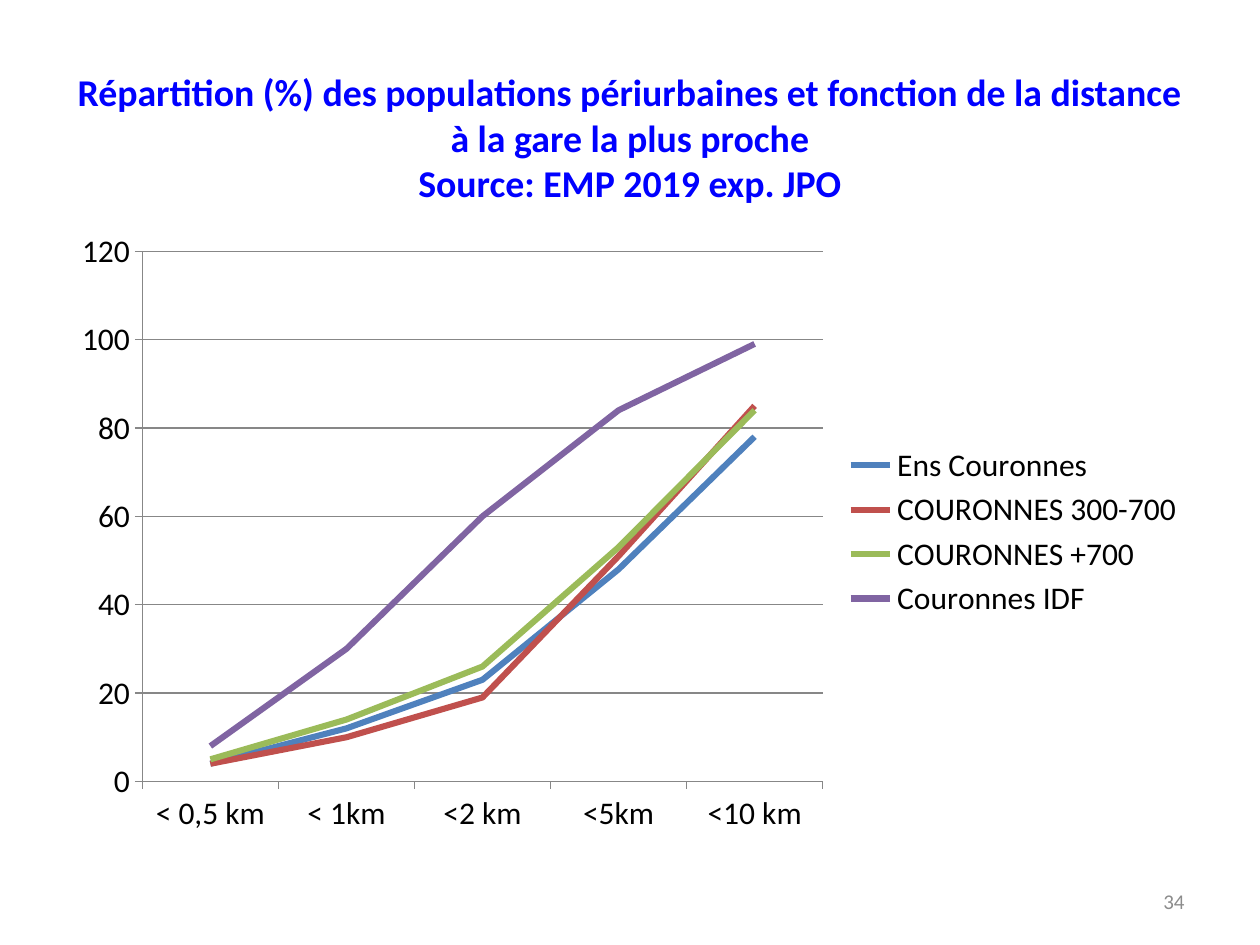
from lxml import etree
from pptx import Presentation
from pptx import util as u
from pptx.chart.data import CategoryChartData
from pptx.dml.color import RGBColor
from pptx.enum import chart as charts, text
from pptx.oxml.ns import qn

FONT = "Calibri"
GRID_GRAY = "878787"
TITLE = (
    "Répartition (%) des populations périurbaines et fonction de la distance "
    "à la gare la plus proche\vSource: EMP 2019 exp. JPO"
)
DISTANCES = ["< 0,5 km", "< 1km", "<2 km", "<5km", "<10 km"]
POPULATIONS = [
    ("Ens Couronnes", [4, 12, 23, 48, 78], "4F81BD"),
    ("COURONNES 300-700", [4, 10, 19, 51, 85], "C0504D"),
    ("COURONNES +700", [5, 14, 26, 53, 84], "9BBB59"),
    ("Couronnes IDF", [8, 30, 60, 84, 99], "8064A2"),
]


def px(length):
    return u.Emu(round(length * 914400 / 126))


def color(value):
    return RGBColor.from_string(value)


def style_font(font, size, value, bold=False):
    font.name = FONT
    font.size = u.Pt(size)
    font.bold = bold
    font.color.rgb = color(value)


def style_line(line, value, width):
    line.color.rgb = color(value)
    line.width = u.Pt(width)


def fill_text(shape, content, alignment, size, value, bold=False):
    frame = shape.text_frame
    frame.text = content
    frame.word_wrap = True
    frame.auto_size = text.MSO_AUTO_SIZE.NONE
    frame.vertical_anchor = text.MSO_ANCHOR.MIDDLE
    paragraph = frame.paragraphs[0]
    paragraph.alignment = alignment
    for run in paragraph.runs:
        style_font(run.font, size, value, bold)


def place_title(slide, left, top, width, height):
    title = slide.shapes.title
    title.left, title.top = px(left), px(top)
    title.width, title.height = px(width), px(height)
    fill_text(title, TITLE, text.PP_ALIGN.CENTER, 21.6, "0000FF", True)


def set_plot_layout(chart, **fractions):
    plot_area = chart._chartSpace.chart.plotArea
    for old in plot_area.findall(qn("c:layout")):
        plot_area.remove(old)
    layout = etree.Element(qn("c:layout"))
    manual = etree.SubElement(layout, qn("c:manualLayout"))
    settings = {"layoutTarget": "inner", "xMode": "edge", "yMode": "edge", **fractions}
    for name, value in settings.items():
        etree.SubElement(manual, qn(f"c:{name}")).set("val", str(value))
    plot_area.insert(0, layout)


def place_chart(slide, left, top, width, height):
    data = CategoryChartData()
    data.categories = DISTANCES
    for name, values, _ in POPULATIONS:
        data.add_series(name, values)
    chart = slide.shapes.add_chart(
        charts.XL_CHART_TYPE.LINE, px(left), px(top), px(width), px(height), data
    ).chart
    chart.has_title = False
    style_font(chart.font, 18, "000000")
    chart.has_legend = True
    chart.legend.position = charts.XL_LEGEND_POSITION.RIGHT
    chart.legend.include_in_layout = False
    set_plot_layout(chart, x=0.07, y=0.05, w=0.6, h=0.85)

    plot = chart.plots[0]
    plot.vary_by_categories = False
    for series, (_, _, line_color) in zip(plot.series, POPULATIONS):
        series.smooth = False
        series.marker.style = charts.XL_MARKER_STYLE.NONE
        style_line(series.format.line, line_color, 3.5)

    for axis in (chart.category_axis, chart.value_axis):
        axis.major_tick_mark = charts.XL_TICK_MARK.OUTSIDE
        axis.minor_tick_mark = charts.XL_TICK_MARK.NONE
        style_line(axis.format.line, GRID_GRAY, 0.75)
    chart.category_axis.has_major_gridlines = False
    value_axis = chart.value_axis
    value_axis.minimum_scale, value_axis.maximum_scale = 0, 120
    value_axis.major_unit = 20
    value_axis.has_major_gridlines = True
    style_line(value_axis.major_gridlines.format.line, GRID_GRAY, 0.75)


def place_slide_number(slide, left, top, width, height):
    box = slide.shapes.add_textbox(px(left), px(top), px(width), px(height))
    fill_text(box, "34", text.PP_ALIGN.RIGHT, 12, "8C8C8C")


def main():
    presentation = Presentation()
    presentation.slide_width, presentation.slide_height = px(1260), px(945)
    slide = presentation.slides.add_slide(presentation.slide_layouts[5])
    place_title(slide, 63, 58, 1134, 158)
    place_chart(slide, 63, 220, 1134, 624)
    place_slide_number(slide, 903, 876, 294, 50)
    presentation.save("out.pptx")


if __name__ == "__main__":
    main()
